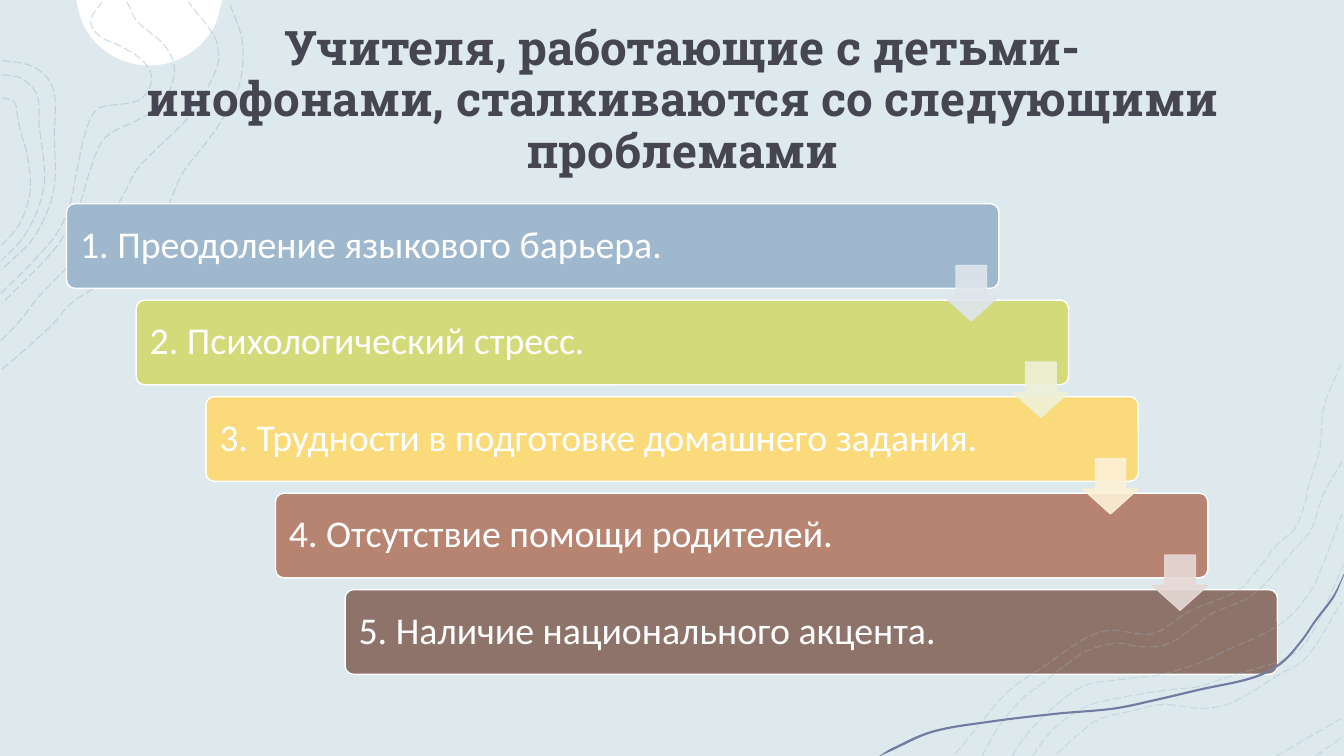
import math

from lxml import etree
from pptx import Presentation
from pptx.dml.color import RGBColor
from pptx.enum.dml import MSO_LINE
from pptx.enum.shapes import MSO_SHAPE
from pptx.enum.text import MSO_ANCHOR, PP_ALIGN
from pptx.oxml.ns import qn
from pptx.util import Inches, Pt

RECTANGLE, ROUNDED = MSO_SHAPE.RECTANGLE, MSO_SHAPE.ROUNDED_RECTANGLE
DOWN_ARROW = MSO_SHAPE.DOWN_ARROW
LONG_DASH = MSO_LINE.LONG_DASH
MIDDLE, BOTTOM = MSO_ANCHOR.MIDDLE, MSO_ANCHOR.BOTTOM
LEFT, CENTER = PP_ALIGN.LEFT, PP_ALIGN.CENTER
WIDTH, HEIGHT = 13.33, 7.5
TITLE_FONT, BODY_FONT = "Roboto Slab", "Calibri"

TITLE = "Учителя, работающие с детьми-инофонами, сталкиваются со следующими проблемами"
# Text, bar colour, colour of the arrow to the next bar
PROBLEMS = [
    ("1. Преодоление языкового барьера.", "9FB8CD", "DFE6ED"),
    ("2. Психологический стресс.", "D2DA7A", "EEF1D7"),
    ("3. Трудности в подготовке домашнего задания.", "FADA7A", "FDF1D7"),
    ("4. Отсутствие помощи родителей.", "B88472", "E6D9D5"),
    ("5. Наличие национального акцента.", "8E736A", None),
]

# Contour lines as knots in inches from the slide's top left corner
TOP_LEFT_CONTOURS = [
    [(0.02, 3.66), (0.19, 3.52), (0.55, 3.19), (0.66, 3.05), (0.85, 2.91), (1.1, 2.77),
     (1.26, 2.69), (1.41, 2.55), (1.59, 2.23), (1.67, 2.04), (1.81, 1.72), (2.01, 1.46),
     (2.19, 1.21), (2.35, 0.91), (2.4, 0.72), (2.41, 0.53), (2.39, 0.34), (2.27, 0.02)],
    [(0.01, 3.38), (0.21, 3.17), (0.37, 2.96), (0.63, 2.69), (0.87, 2.44), (1.07, 2.19),
     (1.21, 1.96), (1.36, 1.68), (1.54, 1.49), (1.82, 1.22), (1.97, 1.03), (2.11, 0.77),
     (2.16, 0.64), (2.17, 0.56), (2.13, 0.37), (1.87, 0.02)],
    [(1.26, 0.02), (1.35, 0.2), (1.41, 0.26), (1.64, 0.46), (1.73, 0.67), (1.68, 0.9),
     (1.54, 1.08), (1.35, 1.2), (1.15, 1.29), (1.03, 1.38), (0.95, 1.53), (0.88, 1.73),
     (0.77, 2.08), (0.6, 2.39), (0.42, 2.61), (0.27, 2.76), (0.02, 3.01)],
    [(0.01, 2.91), (0.35, 2.57), (0.56, 2.32), (0.69, 2.04), (0.77, 1.65), (0.83, 1.38),
     (0.91, 1.15), (1.01, 1.06), (1.24, 1.03), (1.4, 0.98), (1.5, 0.82), (1.48, 0.69),
     (1.38, 0.57), (1.2, 0.46), (0.98, 0.35), (0.9, 0.21), (1.01, 0.02)],
    [(0.02, 0.6), (0.27, 0.64), (0.43, 0.73), (0.52, 0.86), (0.55, 1.04), (0.54, 1.32),
     (0.55, 1.69), (0.53, 1.9), (0.47, 2.1), (0.31, 2.39), (0.01, 2.68)],
    [(0.02, 0.74), (0.22, 0.78), (0.37, 0.95), (0.39, 1.26), (0.43, 1.55), (0.44, 1.81),
     (0.37, 2.09), (0.22, 2.37), (0.01, 2.59)],
    [(0.02, 0.97), (0.14, 1.01), (0.17, 1.13), (0.2, 1.29), (0.27, 1.54), (0.3, 1.89),
     (0.22, 2.17), (0.13, 2.31), (0.02, 2.43)],
]
BOTTOM_RIGHT_CONTOURS = [
    [(9.47, 7.48), (9.55, 7.39), (9.76, 7.13), (9.91, 6.95), (10.07, 6.8), (10.37, 6.6),
     (10.61, 6.43), (10.83, 6.3), (11.03, 6.25), (11.18, 6.27), (11.42, 6.29), (11.6, 6.2),
     (11.78, 6.07), (12.05, 5.96), (12.29, 5.85), (12.45, 5.68), (12.66, 5.41),
     (12.85, 5.23), (12.96, 4.93), (12.97, 4.85), (13.09, 4.45), (13.13, 4.04), (13.31, 3.59)],
    [(9.74, 7.5), (9.9, 7.22), (10.13, 6.94), (10.35, 6.77), (10.54, 6.62), (10.8, 6.45),
     (11.08, 6.38), (11.27, 6.41), (11.51, 6.41), (11.69, 6.33), (12, 6.1), (12.23, 6),
     (12.38, 5.93), (12.55, 5.79), (12.81, 5.48), (13, 5.26), (13.12, 4.92), (13.31, 4.58)],
    [(13.05, 7.5), (13.33, 7.3)],
    [(12.66, 7.5), (13.3, 7.13)],
    [(10.48, 7.48), (10.68, 7.3), (10.89, 7.14), (11.24, 7.05), (11.51, 6.99), (11.76, 7.01),
     (11.93, 7.03), (12.22, 6.97), (12.69, 6.69), (12.95, 6.53), (13.31, 5.97)],
    [(10.24, 7.5), (10.44, 7.24), (10.77, 7.01), (11.12, 6.92), (11.54, 6.85), (11.89, 6.81),
     (12.2, 6.71), (12.57, 6.6), (12.76, 6.53), (12.93, 6.4), (13.08, 6.15), (13.33, 5.59)],
    [(10.04, 7.5), (10.17, 7.3), (10.47, 7), (10.76, 6.8), (11.05, 6.75), (11.3, 6.72),
     (11.48, 6.7), (11.89, 6.58), (12.21, 6.43), (12.49, 6.31), (12.73, 6.17), (12.9, 6),
     (13.05, 5.77), (13.31, 5.1)],
]
# Upper edge of the accent ribbon
RIBBON_EDGE = [(8.72, 7.5), (8.83, 7.43), (9.24, 7.25), (9.81, 7.15), (10.48, 7.07),
               (11.04, 7.02), (11.43, 6.94), (11.9, 6.83), (12.43, 6.71), (12.7, 6.57),
               (12.91, 6.34), (13.04, 6.15), (13.22, 5.91), (13.33, 5.69)]


def colour(code):
    return RGBColor.from_string(code)


def set_opacity(fill, percent):
    for tone in fill._xPr.iter(qn("a:srgbClr")):
        etree.SubElement(tone, qn("a:alpha")).set("val", str(percent * 1000))


def paint(shape, fill=None, line=None, weight=1, opacity=100):
    shape.shadow.inherit = False
    if fill:
        shape.fill.solid()
        shape.fill.fore_color.rgb = colour(fill)
    else:
        shape.fill.background()
    if line:
        shape.line.color.rgb = colour(line)
        shape.line.width = Pt(weight)
    else:
        shape.line.fill.background()
    if opacity < 100:
        set_opacity(shape.fill, opacity)


def write(frame, words, font, size, tone, align, anchor, bold=False):
    frame.word_wrap = True
    frame.vertical_anchor = anchor
    para = frame.paragraphs[0]
    para.alignment = align
    para.line_spacing = 0.9
    span = para.add_run()
    span.text = words
    span.font.name, span.font.size, span.font.bold = font, Pt(size), bold
    span.font.color.rgb = colour(tone)


def handle(before, knot, after, chord):
    """Bezier handle a third of the chord long, along the tangent at the knot."""
    dx, dy = after[0] - before[0], after[1] - before[1]
    share = chord / 3 / (math.hypot(dx, dy) or 1)
    return knot[0] + dx * share, knot[1] + dy * share


def curve(page, knots, close=False):
    """Freeform that runs smoothly through the knots."""
    spots = [(Inches(x), Inches(y)) for x, y in knots]
    builder = page.shapes.build_freeform(*spots[0])
    builder.add_line_segments(spots[1:], close=close)
    shape = builder.convert_to_shape()
    points = [(x - shape.left, y - shape.top) for x, y in spots]
    ends = [points[0], *points, points[-1]]
    segments = list(shape._element.iter(qn("a:lnTo")))
    for segment, a, b, c, d in zip(segments, ends, ends[1:], ends[2:], ends[3:]):
        chord = math.dist(b, c)
        bezier = etree.Element(qn("a:cubicBezTo"))
        for x, y in (handle(a, b, c, chord), handle(d, c, b, chord), c):
            etree.SubElement(bezier, qn("a:pt"), x=str(round(x)), y=str(round(y)))
        segment.getparent().replace(segment, bezier)
    return shape


def add_contours(page, contours, opacity):
    for knots in contours:
        contour = curve(page, knots)
        paint(contour, line="9FB8CD", weight=0.75)
        contour.line.dash_style = LONG_DASH
        set_opacity(contour.line.fill, opacity)


def add_backdrop(page):
    for fill, line in (("FFFFFF", "F2F2F2"), ("DDE9EC", None)):
        sheet = page.shapes.add_shape(RECTANGLE, 0, 0, Inches(WIDTH), Inches(HEIGHT))
        paint(sheet, fill, line, 1.5)


def add_top_left_corner(page):
    # White disc cut off by the top edge
    centre_x, centre_y, radius, parts = 1.48, -0.08, 0.73, 8
    start = math.asin(-centre_y / radius)
    angles = [start + (math.pi - 2 * start) * i / parts for i in range(parts + 1)]
    disc = curve(page, [(centre_x + radius * math.cos(a), centre_y + radius * math.sin(a))
                        for a in angles], close=True)
    paint(disc, fill="FFFFFF")
    add_contours(page, TOP_LEFT_CONTOURS, 50)


def add_bottom_right_corner(page):
    add_contours(page, BOTTOM_RIGHT_CONTOURS, 35)
    # Ribbon: the doubled knots at the far end keep its corners sharp
    back = [(min(x + 0.01, WIDTH), min(y + 0.02, HEIGHT)) for x, y in reversed(RIBBON_EDGE)]
    ribbon = curve(page, [*RIBBON_EDGE, RIBBON_EDGE[-1], back[0], *back], close=True)
    paint(ribbon, fill="727CA3")


def add_title(page, left, top, width, height):
    title = page.shapes.title
    title.left, title.top, title.width, title.height = map(Inches, (left, top, width, height))
    write(title.text_frame, TITLE, TITLE_FONT, 34, "464653", CENTER, BOTTOM, bold=True)
    page.shapes._spTree.append(title._element)  # in front of the contours


def add_staircase(page, left, top, width, height):
    bar_width, bar_height, arrow_size = 0.77 * width, 0.18 * height, 0.55
    step_x = (width - bar_width) / (len(PROBLEMS) - 1)
    step_y = (height - bar_height) / (len(PROBLEMS) - 1)
    corners = [(left + i * step_x, top + i * step_y) for i in range(len(PROBLEMS))]
    # Bars
    for (x, y), (words, fill, _) in zip(corners, PROBLEMS):
        bar = page.shapes.add_shape(ROUNDED, *map(Inches, (x, y, bar_width, bar_height)))
        bar.adjustments[0] = 0.1
        paint(bar, fill, "FFFFFF")
        bar.text_frame.margin_left = Inches(0.11)
        write(bar.text_frame, words, BODY_FONT, 27, "FFFFFF", LEFT, MIDDLE)
    # Arrows from each bar to the next
    for (x, y), (_, _, tone) in zip(corners[:-1], PROBLEMS):
        arrow = page.shapes.add_shape(DOWN_ARROW, *map(Inches, (
            x + bar_width - arrow_size, y + 0.73 * bar_height, arrow_size, arrow_size)))
        arrow.adjustments[0], arrow.adjustments[1] = 0.55, 0.45
        paint(arrow, tone, tone, opacity=90)


def main():
    deck = Presentation()
    deck.slide_width, deck.slide_height = Inches(WIDTH), Inches(HEIGHT)
    page = deck.slides.add_slide(deck.slide_layouts[5])
    add_backdrop(page)
    add_top_left_corner(page)
    add_title(page, 1.31, 0.18, 10.92, 1.64)
    add_staircase(page, 0.66, 2.02, 12.01, 4.67)
    add_bottom_right_corner(page)
    deck.save("out.pptx")


if __name__ == "__main__":
    main()
